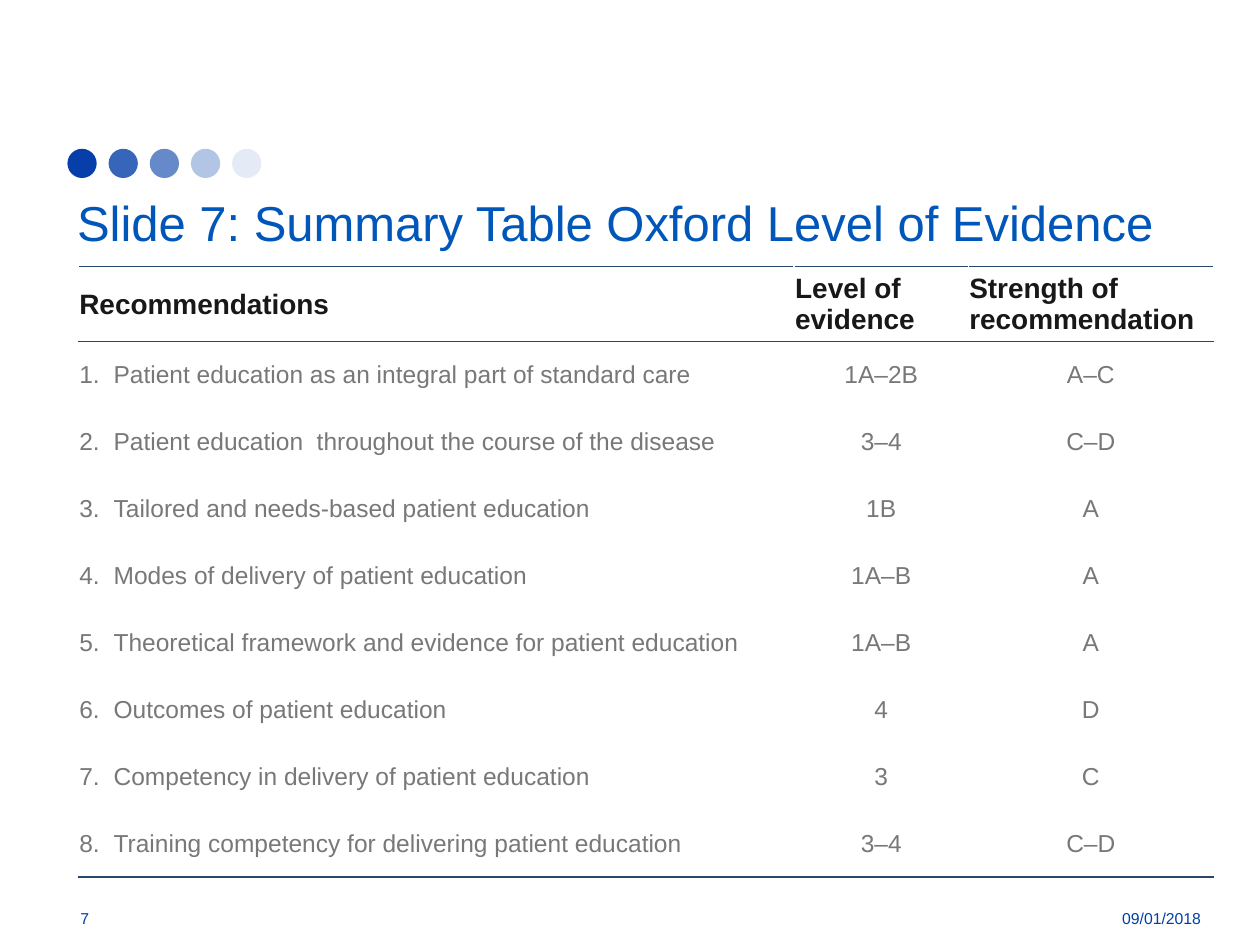
from lxml.etree import SubElement
from pptx import Presentation
from pptx.dml.color import RGBColor
from pptx.enum.shapes import MSO_SHAPE as Preset
from pptx.enum.text import MSO_ANCHOR as Anchor, MSO_AUTO_SIZE as AutoSize, PP_ALIGN as Align
from pptx.oxml.ns import qn
from pptx.util import Cm, Pt

TITLE_BLUE = RGBColor(0x00, 0x56, 0xB9)
FOOTER_BLUE = RGBColor(0x00, 0x3F, 0xA8)
DOT_BLUE = RGBColor(0x06, 0x3F, 0xA9)
RULE_BLUE = RGBColor(0x28, 0x47, 0x6D)
HEADER_BLACK = RGBColor(0x18, 0x18, 0x18)
BODY_GREY = RGBColor(0x78, 0x78, 0x78)

HEADERS = ("Recommendations", "Level of evidence", "Strength of recommendation")
RECOMMENDATIONS = (
    ("Patient education as an integral part of standard care", "1A–2B", "A–C"),
    ("Patient education  throughout the course of the disease", "3–4", "C–D"),
    ("Tailored and needs-based patient education", "1B", "A"),
    ("Modes of delivery of patient education", "1A–B", "A"),
    ("Theoretical framework and evidence for patient education", "1A–B", "A"),
    ("Outcomes of patient education", "4", "D"),
    ("Competency in delivery of patient education", "3", "C"),
    ("Training competency for delivering patient education", "3–4", "C–D"),
)
DOT_OPACITIES = (100, 80, 61, 30, 10)


class SlideBuilder:
    font_name = "Arial"
    cell_format = {
        "vertical_anchor": Anchor.MIDDLE,
        "margin_left": Cm(0.02),
        "margin_right": Cm(0.02),
        "margin_top": Cm(0.02),
        "margin_bottom": 0,
    }

    def __init__(self, presentation):
        self.slide = presentation.slides.add_slide(presentation.slide_layouts[5])

    @staticmethod
    def apply(target, values):
        for name, value in values.items():
            setattr(target, name, value)

    def fill_text(self, frame, text, size, color, align=Align.LEFT, bold=False):
        paragraph = frame.paragraphs[0]
        paragraph.text = text
        paragraph.alignment = align
        self.apply(paragraph.font, {"name": self.font_name, "size": Pt(size), "bold": bold})
        paragraph.font.color.rgb = color
        return paragraph

    def title(self, text, left, top, width, height):
        shape = self.slide.shapes.title
        self.apply(shape, {"left": Cm(left), "top": Cm(top), "width": Cm(width), "height": Cm(height)})
        self.apply(shape.text_frame, {"auto_size": AutoSize.NONE, "vertical_anchor": Anchor.MIDDLE})
        self.fill_text(shape.text_frame, text, 28, TITLE_BLUE)

    def footer(self, text, left, top, width, height, align):
        shape = self.slide.shapes.add_textbox(Cm(left), Cm(top), Cm(width), Cm(height))
        self.apply(shape.text_frame, {"word_wrap": True, "vertical_anchor": Anchor.MIDDLE})
        self.fill_text(shape.text_frame, text, 9, FOOTER_BLUE, align)

    def dot(self, left, top, diameter, opacity):
        shape = self.slide.shapes.add_shape(Preset.OVAL, Cm(left), Cm(top), Cm(diameter), Cm(diameter))
        shape.shadow.inherit = False
        shape.line.fill.background()
        shape.fill.solid()
        shape.fill.fore_color.rgb = DOT_BLUE
        if opacity < 100:
            color = shape.element.spPr.find(qn("a:solidFill")).find(qn("a:srgbClr"))
            SubElement(color, qn("a:alpha"), val=str(opacity * 1000))

    def border(self, cell, side):
        line = SubElement(cell._tc.get_or_add_tcPr(), qn(f"a:{side}"), w=str(Pt(1)))
        fill = SubElement(line, qn("a:solidFill"))
        SubElement(fill, qn("a:srgbClr"), val=str(RULE_BLUE))

    def cell(self, cell, text, borders, **style):
        self.apply(cell, self.cell_format)
        for side in borders:
            self.border(cell, side)
        cell.fill.background()
        return self.fill_text(cell.text_frame, text, **style)

    def table(self, left, top, widths, header_height, row_height):
        count = len(RECOMMENDATIONS)
        height = header_height + count * row_height
        frame = self.slide.shapes.add_table(
            count + 1, len(widths), Cm(left), Cm(top), Cm(sum(widths)), Cm(height))
        table = frame.table
        self.apply(table, {"first_row": False, "horz_banding": False})
        for column, width in zip(table.columns, widths):
            column.width = Cm(width)
        for index, row in enumerate(table.rows):
            row.height = Cm(row_height if index else header_height)
        for column, text in enumerate(HEADERS):
            self.cell(table.cell(0, column), text, ("lnT", "lnB"),
                      size=16, color=HEADER_BLACK, bold=True)
        row_borders = {1: ("lnT",), count: ("lnB",)}
        indent = Cm(0.69)
        for number, (recommendation, *grades) in enumerate(RECOMMENDATIONS, 1):
            borders = row_borders.get(number, ())
            paragraph = self.cell(table.cell(number, 0), f"{number}.\t{recommendation}", borders,
                                  size=14, color=BODY_GREY)
            properties = paragraph._p.get_or_add_pPr()
            properties.set("marL", str(indent))
            properties.set("indent", str(-indent))
            for column, grade in enumerate(grades, 1):
                self.cell(table.cell(number, column), grade, borders,
                          size=14, color=BODY_GREY, align=Align.CENTER)


def main():
    presentation = Presentation()
    SlideBuilder.apply(presentation, {"slide_width": Cm(25.4), "slide_height": Cm(19.05)})
    builder = SlideBuilder(presentation)
    for index, opacity in enumerate(DOT_OPACITIES):
        builder.dot(1.36 + index * 0.83, 3, 0.59, opacity)
    builder.title("Slide 7: Summary Table Oxford Level of Evidence", 1.3, 3.6, 23.14, 1.76)
    builder.footer("7", 1.37, 18.01, 2.44, 1.02, Align.LEFT)
    builder.footer("09/01/2018", 21.06, 18.01, 3.4, 1.02, Align.RIGHT)
    builder.table(1.58, 5.37, (14.43, 3.51, 4.94), 1.51, 1.35)
    presentation.save("out.pptx")


if __name__ == "__main__":
    main()
